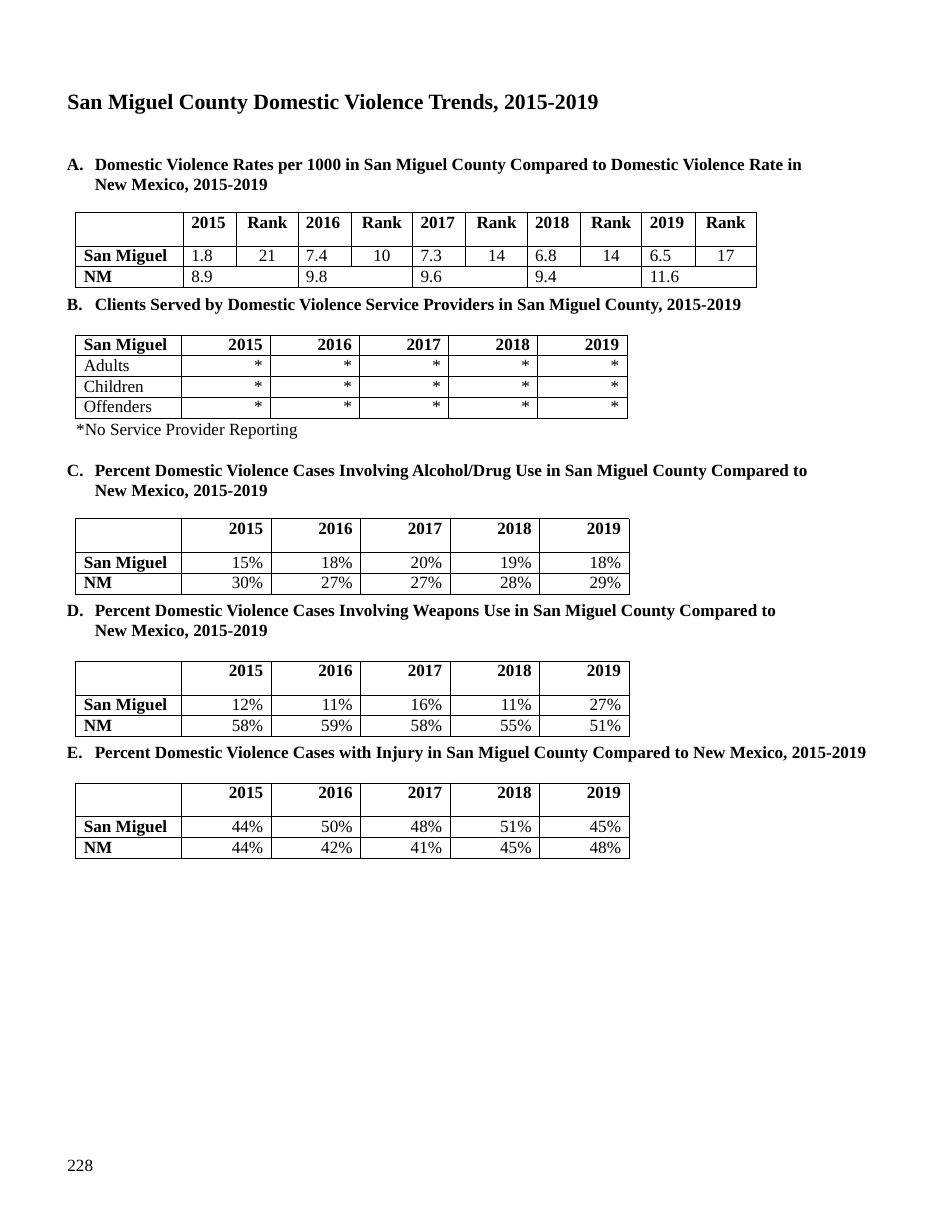
from pptx import Presentation
from pptx import util as u
from pptx.dml.color import RGBColor
from pptx.enum import text
from pptx.oxml import parse_xml
from pptx.oxml.ns import nsdecls

BLACK = RGBColor(0x00, 0x00, 0x00)
FONT = "Times New Roman"
YEARS = ["2015", "2016", "2017", "2018", "2019"]
ROW_HEIGHT = 0.47
CELL_MARGIN = 0.18
TABLE_INDENT = 0.22
TABLE_GAP = 0.42
LEFT, CENTER, RIGHT = text.PP_ALIGN.LEFT, text.PP_ALIGN.CENTER, text.PP_ALIGN.RIGHT


def write_text(paragraph, content, size=11, bold=False, align=LEFT, before=0,
               line=None, indent=0, hanging=0):
    paragraph.alignment = align
    paragraph.space_before = u.Pt(before)
    if line:
        paragraph.line_spacing = u.Pt(line)
    properties = paragraph._p.get_or_add_pPr()
    properties.set("marL", str(u.Cm(indent)))
    properties.set("indent", str(-u.Cm(hanging)))
    if content:
        run = paragraph.add_run()
        run.text = content
        run.font.name = FONT
        run.font.size = u.Pt(size)
        run.font.bold = bold
        run.font.color.rgb = BLACK


def heading(content, before=0.9):
    return dict(content=content, bold=True, before=before, line=12.7,
                indent=0.65, hanging=0.63)


def add_text_box(slide, box, paragraphs):
    shape = slide.shapes.add_textbox(*map(u.Cm, box))
    frame = shape.text_frame
    frame.word_wrap = True
    frame.margin_left = frame.margin_right = frame.margin_bottom = 0
    frame.margin_top = u.Cm(0.03)
    for index, options in enumerate(paragraphs):
        paragraph = frame.paragraphs[0] if index == 0 else frame.add_paragraph()
        write_text(paragraph, **options)


def set_borders(cell):
    properties = cell._tc.get_or_add_tcPr()
    for position, side in enumerate(("lnL", "lnR", "lnT", "lnB")):
        properties.insert(position, parse_xml(
            f'<a:{side} {nsdecls("a")} w="{u.Pt(0.75)}"><a:solidFill>'
            f'<a:srgbClr val="{BLACK}"/></a:solidFill></a:{side}>'))


def add_table(slide, box, rows, widths, aligns, bold_labels=True, merge_pairs=False):
    left, top = box
    shape = slide.shapes.add_table(
        len(rows), len(widths), u.Cm(left), u.Cm(top),
        u.Cm(sum(widths)), u.Cm(ROW_HEIGHT * len(rows)))
    table = shape.table
    table.first_row = table.horz_banding = False
    for column, width in zip(table.columns, widths):
        column.width = u.Cm(width)
    for row_index, values in enumerate(rows):
        table.rows[row_index].height = u.Cm(ROW_HEIGHT)
        for column_index, value in enumerate(values):
            cell = table.cell(row_index, column_index)
            align = aligns[column_index]
            cell.margin_top = cell.margin_bottom = 0
            cell.margin_left = u.Cm(CELL_MARGIN if align == LEFT else 0)
            cell.margin_right = u.Cm(CELL_MARGIN if align == RIGHT else 0)
            cell.fill.background()
            set_borders(cell)
            bold = row_index == 0 or (bold_labels and column_index == 0)
            write_text(cell.text_frame.paragraphs[0], value, bold=bold,
                       align=align, line=12.4)
    if merge_pairs:
        last = len(rows) - 1
        for column_index in range(1, len(widths), 2):
            table.cell(last, column_index).merge(table.cell(last, column_index + 1))


def add_section(slide, box, paragraphs, rows, widths, aligns, **options):
    left, top, _, height = box
    add_text_box(slide, box, paragraphs)
    table_box = (left + TABLE_INDENT, top + height + TABLE_GAP)
    add_table(slide, table_box, rows, widths, aligns, **options)


def add_rates_section(slide, box):
    rates = ["1.8", "7.4", "7.3", "6.8", "6.5"]
    ranks = ["21", "10", "14", "14", "17"]
    state_rates = ["8.9", "9.8", "9.6", "9.4", "11.6"]
    rows = [[""], ["San Miguel"], ["NM"]]
    for year, rate, rank, state_rate in zip(YEARS, rates, ranks, state_rates):
        rows[0] += [year, "Rank"]
        rows[1] += [rate, rank]
        rows[2] += [state_rate, ""]
    paragraphs = [
        dict(content="San Miguel County Domestic Violence Trends, 2015-2019",
             size=14, bold=True, before=0.9, indent=0.03),
        heading("A.\tDomestic Violence Rates per 1000 in San Miguel County Compared "
                "to Domestic Violence Rate in New Mexico, 2015-2019", before=26)]
    add_section(slide, box, paragraphs, rows, [2.44] + [1.21, 1.39] * 5,
                [LEFT] + [LEFT, CENTER] * 5, merge_pairs=True)


def add_clients_section(slide, box):
    rows = [["San Miguel"] + YEARS]
    rows += [[label] + ["*"] * 5 for label in ("Adults", "Children", "Offenders")]
    paragraphs = [heading("B.\tClients Served by Domestic Violence Service Providers "
                          "in San Miguel County, 2015-2019")]
    add_section(slide, box, paragraphs, rows, [2.4] + [2.02] * 5,
                [LEFT] + [RIGHT] * 5, bold_labels=False)


def add_percent_section(slide, box, paragraphs, county, state):
    rows = [[""] + YEARS]
    for label, values in (("San Miguel", county), ("NM", state)):
        rows.append([label] + [f"{value}%" for value in values])
    add_section(slide, box, paragraphs, rows, [2.4] + [2.03] * 5,
                [LEFT] + [RIGHT] * 5)


def main():
    presentation = Presentation()
    presentation.slide_width = u.Cm(21.59)
    presentation.slide_height = u.Cm(27.94)
    slide = presentation.slides.add_slide(presentation.slide_layouts[6])

    add_text_box(slide, (1.5, 26.16, 0.7, 0.53),
                 [dict(content="228", before=0.9, indent=0.03)])
    add_rates_section(slide, (1.5, 1.96, 16.8, 2.44))
    add_clients_section(slide, (1.5, 6.65, 15.5, 0.53))
    add_percent_section(
        slide, (1.5, 9.47, 16.95, 1.88),
        [dict(content="*No Service Provider Reporting", before=0.9, indent=0.23),
         heading("C.\tPercent Domestic Violence Cases Involving Alcohol/Drug Use in "
                 "San Miguel County Compared to New Mexico, 2015-2019", before=13.2)],
        [15, 18, 20, 19, 18], [30, 27, 27, 28, 29])
    add_percent_section(
        slide, (1.5, 13.59, 16.25, 0.99),
        [heading("D.\tPercent Domestic Violence Cases Involving Weapons Use in "
                 "San Miguel County Compared to New Mexico, 2015-2019", before=3.2)],
        [12, 11, 16, 11, 27], [58, 59, 58, 55, 51])
    add_percent_section(
        slide, (1.5, 16.81, 18.3, 0.53),
        [heading("E.\tPercent Domestic Violence Cases with Injury in San Miguel County "
                 "Compared to New Mexico, 2015-2019")],
        [44, 50, 48, 51, 45], [44, 42, 41, 45, 48])

    presentation.save("out.pptx")


if __name__ == "__main__":
    main()
